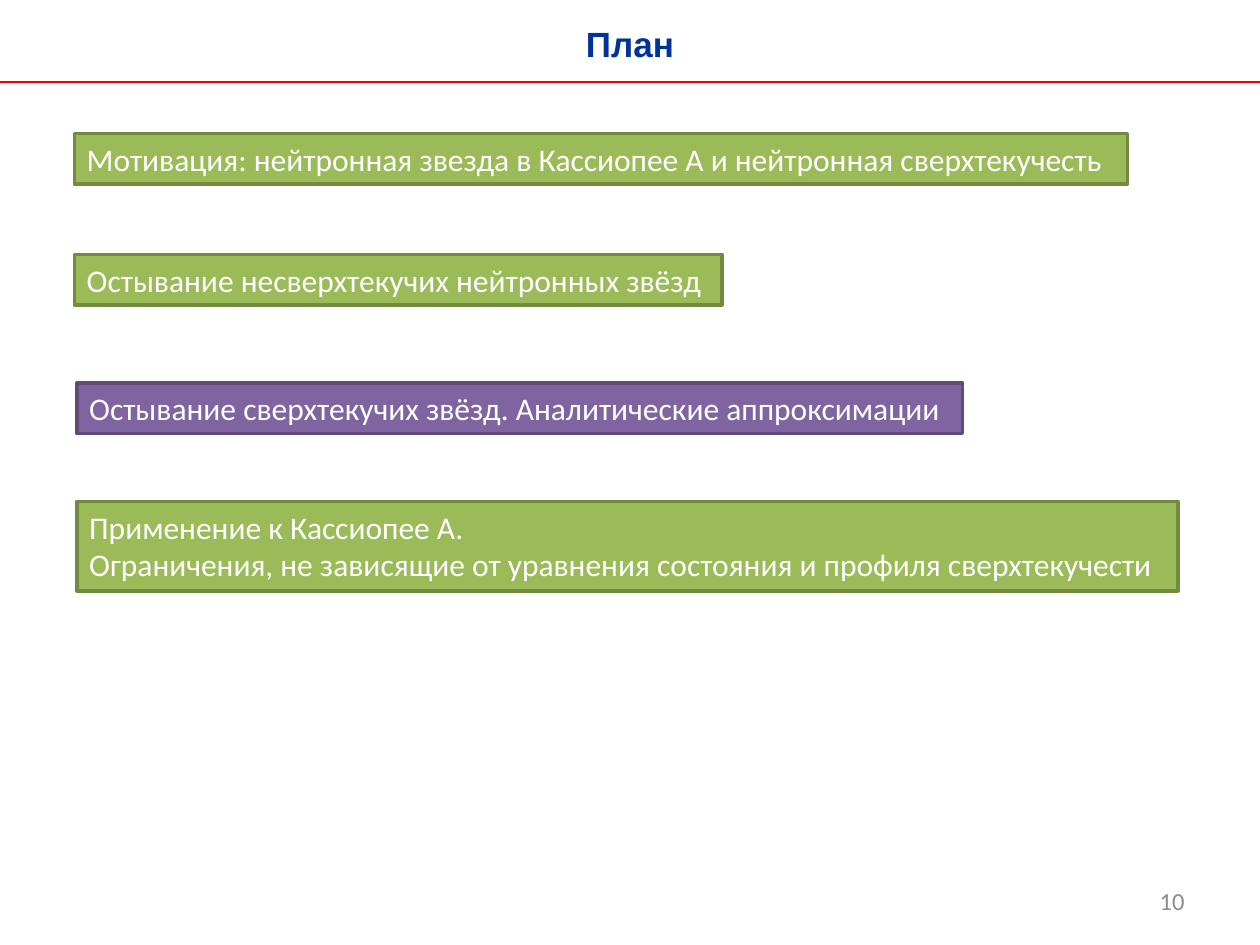
from lxml.etree import SubElement
from pptx import Presentation
from pptx.dml.color import RGBColor
from pptx.enum.shapes import MSO_CONNECTOR, MSO_SHAPE
from pptx.enum.text import MSO_ANCHOR, PP_ALIGN
from pptx.oxml.ns import qn
from pptx.util import Inches, Pt

GREEN = ("9BBB59", "738A42")
PURPLE = ("8064A2", "5F4A78")
TOPICS = [
    (0.59, 1.06, 8.36, 0.4, GREEN,
     ["Мотивация: нейтронная звезда в Кассиопее А и нейтронная сверхтекучесть"]),
    (0.59, 2.02, 5.14, 0.4, GREEN,
     ["Остывание несверхтекучих нейтронных звёзд"]),
    (0.61, 3.04, 7.03, 0.4, PURPLE,
     ["Остывание сверхтекучих звёзд. Аналитические аппроксимации"]),
    (0.61, 3.98, 8.74, 0.71, GREEN,
     ["Применение к Кассиопее А.",
      "Ограничения, не зависящие от уравнения состояния и профиля сверхтекучести"]),
]


def color(value):
    return RGBColor.from_string(value)


class PlanSlide:
    body_font = "Calibri"
    title_font = "Arial"

    def __init__(self, s):
        self.s = s

    def add_lines(self, tf, lines, size, font, fill, align, bold=False):
        for i, line in enumerate(lines):
            p = tf.paragraphs[0] if i == 0 else tf.add_paragraph()
            p.alignment = align
            r = p.add_run()
            r.text = line
            r.font.size = Pt(size)
            r.font.name = font
            r.font.bold = bold
            r.font.color.rgb = color(fill)

    def text(self, x, y, w, h, line, size, font, fill, align,
             anchor=MSO_ANCHOR.TOP, bold=False):
        sp = self.s.shapes.add_textbox(Inches(x), Inches(y), Inches(w), Inches(h))
        tf = sp.text_frame
        tf.word_wrap = True
        tf.vertical_anchor = anchor
        self.add_lines(tf, [line], size, font, fill, align, bold)

    def rule(self, y, width, fill, weight):
        sp = self.s.shapes.add_connector(
            MSO_CONNECTOR.STRAIGHT, 0, Inches(y), Inches(width), Inches(y))
        sp.line.color.rgb = color(fill)
        sp.line.width = Pt(weight)
        SubElement(sp._element.spPr, qn("a:effectLst"))

    def topic(self, x, y, w, h, colors, lines):
        sp = self.s.shapes.add_shape(
            MSO_SHAPE.RECTANGLE, Inches(x), Inches(y), Inches(w), Inches(h))
        sp.shadow.inherit = False
        fill, border = colors
        sp.fill.solid()
        sp.fill.fore_color.rgb = color(fill)
        sp.line.color.rgb = color(border)
        sp.line.width = Pt(2)
        tf = sp.text_frame
        tf.word_wrap = False
        tf.vertical_anchor = MSO_ANCHOR.TOP
        self.add_lines(tf, lines, 18, self.body_font, "FFFFFF", PP_ALIGN.LEFT)


def main():
    prs = Presentation()
    prs.slide_width = Inches(10)
    prs.slide_height = Inches(7.5)
    plan = PlanSlide(prs.slides.add_slide(prs.slide_layouts[6]))
    plan.text(0, 0.13, 10, 0.43, "План", 20, plan.title_font, "003399",
              PP_ALIGN.CENTER, bold=True)
    plan.rule(0.65, 10, "FF0000", 0.75)
    plan.text(7.17, 6.95, 2.33, 0.4, "10", 14, plan.body_font, "8C8C8C",
              PP_ALIGN.RIGHT, MSO_ANCHOR.MIDDLE)
    for topic in TOPICS:
        plan.topic(*topic)
    prs.save("out.pptx")


if __name__ == "__main__":
    main()
